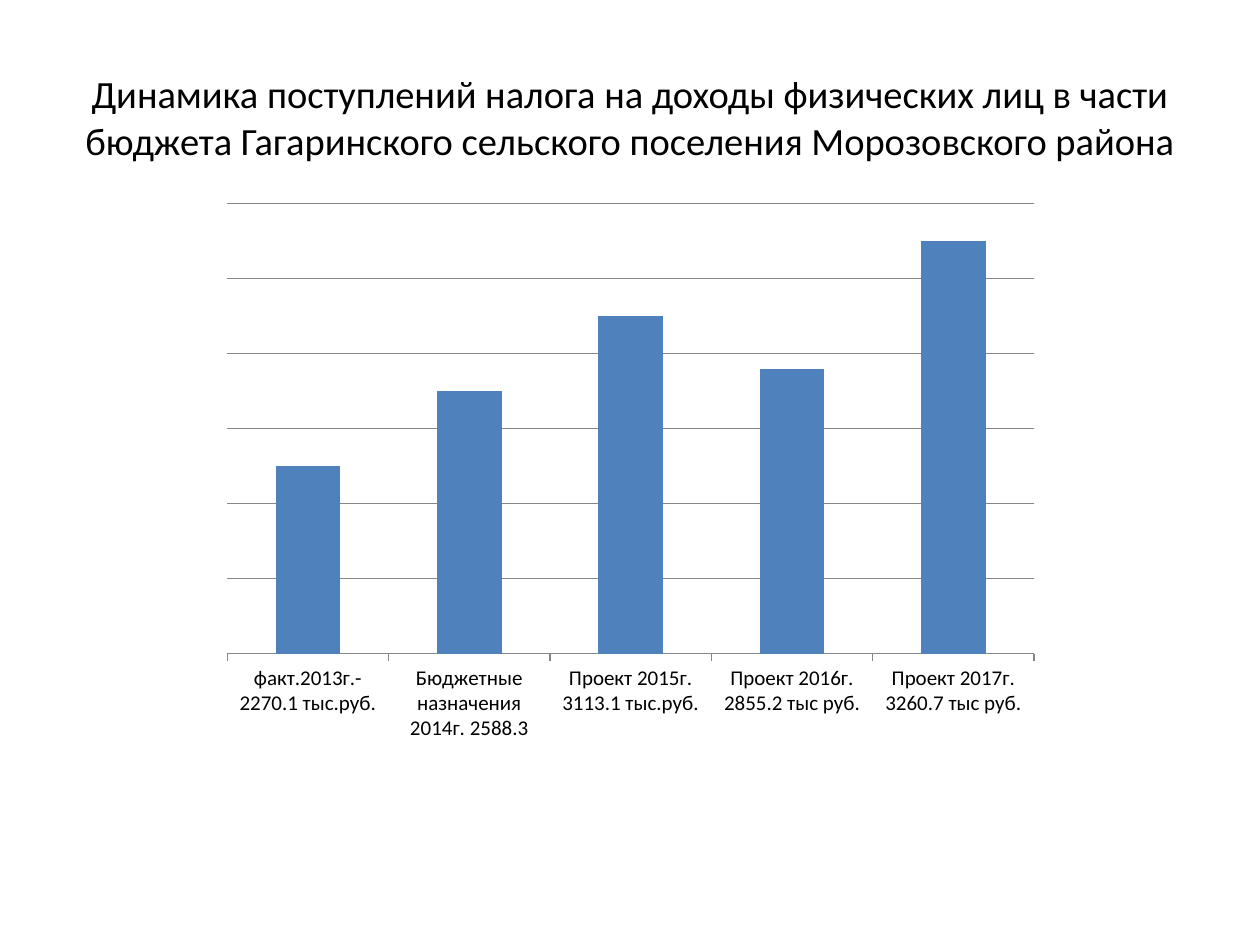
from pptx import Presentation
from pptx.chart.data import CategoryChartData as Data
from pptx.dml.color import RGBColor as Rgb
from pptx.enum.chart import XL_CHART_TYPE as Kind, XL_TICK_MARK as Tick
from pptx.enum.chart import XL_TICK_LABEL_POSITION as Label
from pptx.enum.text import MSO_ANCHOR as Anchor, PP_ALIGN as Align
from pptx.util import Inches, Pt

HUES = {"text": "000000", "bar": "4F81BD", "line": "868686"}
FACE = "Calibri"


def style(font, size):
    font.name = FACE
    font.size = Pt(size)
    font.color.rgb = Rgb.from_string(HUES["text"])


deck = Presentation()
deck.slide_width, deck.slide_height = Inches(10), Inches(7.5)
slide = deck.slides.add_slide(deck.slide_layouts[6])

title = slide.shapes.add_textbox(Inches(0.5), Inches(0.3), Inches(9), Inches(1.25))
frame = title.text_frame
frame.word_wrap = True
frame.vertical_anchor = Anchor.MIDDLE
frame.text = (
    "Динамика поступлений налога на доходы физических лиц в части "
    "бюджета Гагаринского сельского поселения Морозовского района"
)
para = frame.paragraphs[0]
para.alignment = Align.CENTER
style(para.runs[0].font, 22)

data = Data()
data.categories = [
    "факт.2013г.- 2270.1 тыс.руб.",
    "Бюджетные назначения 2014г. 2588.3",
    "Проект 2015г. 3113.1 тыс.руб.",
    "Проект 2016г. 2855.2 тыс руб.",
    "Проект 2017г. 3260.7 тыс руб.",
]
data.add_series("Series 1", [2.5, 3.5, 4.5, 3.8, 5.5])
chart = slide.shapes.add_chart(
    Kind.COLUMN_CLUSTERED,
    Inches(1.67), Inches(1.53), Inches(6.67), Inches(4.44), data,
).chart
chart.has_title = False
chart.has_legend = False
style(chart.font, 18)

plot = chart.plots[0]
plot.gap_width = 150
plot.vary_by_categories = False
fill = plot.series[0].format.fill
fill.solid()
fill.fore_color.rgb = Rgb.from_string(HUES["bar"])

years = chart.category_axis
years.major_tick_mark = Tick.OUTSIDE
years.tick_label_position = Label.NEXT_TO_AXIS
style(years.tick_labels.font, 12)

scale = chart.value_axis
scale.visible = False
scale.minimum_scale, scale.maximum_scale = 0, 6
scale.major_unit = 1
scale.has_major_gridlines = True

for part in (years, scale.major_gridlines):
    part.format.line.width = Pt(0.75)
    part.format.line.color.rgb = Rgb.from_string(HUES["line"])

deck.save("out.pptx")
